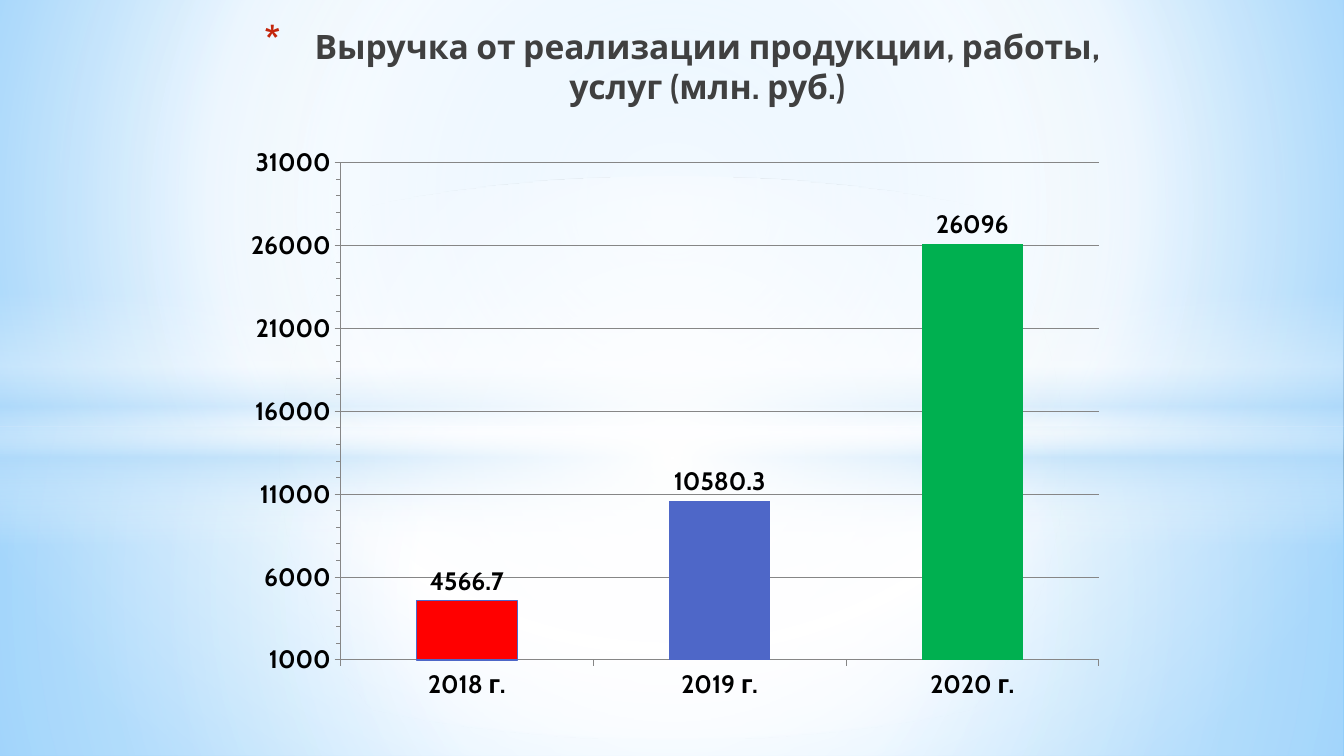
import pptx
import pptx.chart.data
import pptx.dml.color
import pptx.enum.chart
import pptx.enum.shapes
import pptx.enum.text
import pptx.oxml
import pptx.oxml.ns
import pptx.util

Pt = pptx.util.Pt
qn = pptx.oxml.ns.qn
NAMESPACES = pptx.oxml.ns.nsdecls("a", "c")

COLORS = {
    "white": "FFFFFF", "sky": "9ED5FF", "deep sky": "5BB9FF", "haze": "B4DCFA",
    "title": "404040", "bullet": "C3260C", "text": "000000", "grid": "868686",
    "2018": "FF0000", "2019": "4E67C8", "2020": "00B050",
}
CENTER = (50, 50, 50, 50)
REVENUE = {"2018 г.": 4566.7, "2019 г.": 10580.3, "2020 г.": 26096}


def rgb(name):
    return pptx.dml.color.RGBColor.from_string(COLORS[name])


def format_font(font, size=18, bold=True, color="text", name="Cabin"):
    font.size, font.bold, font.name = Pt(size), bold, name
    font.color.rgb = rgb(color)


def write_text(frame, text, align=pptx.enum.text.PP_ALIGN.CENTER, **font_format):
    """Put one formatted paragraph into the frame and return it."""
    frame.word_wrap = True
    paragraph = frame.paragraphs[0]
    paragraph.alignment = align
    run = paragraph.add_run()
    run.text = text
    format_font(run.font, **font_format)
    return paragraph


class RevenueSlide:
    def __init__(self, deck):
        self.slide = deck.slides.add_slide(deck.slide_layouts[5])
        self.width, self.height = deck.slide_width, deck.slide_height

    def gradient(self, fill, owner, stops, focus=None):
        """Stops are (position %, colour, opacity %); focus makes it radial."""
        fill.gradient()
        stops_xml = "".join(
            f'<a:gs pos="{position * 1000}"><a:srgbClr val="{COLORS[color]}">'
            f'<a:alpha val="{opacity * 1000}"/></a:srgbClr></a:gs>'
            for position, color, opacity in stops)
        if focus:
            sides = " ".join(f'{side}="{share * 1000}"' for side, share in zip("ltrb", focus))
            shade = f'<a:path path="circle"><a:fillToRect {sides}/></a:path>'
        else:
            shade = '<a:lin ang="5400000" scaled="0"/>'
        old = next(owner.iter(qn("a:gradFill")))
        old.getparent().replace(old, pptx.oxml.parse_xml(
            f'<a:gradFill {NAMESPACES} rotWithShape="1"><a:gsLst>{stops_xml}</a:gsLst>{shade}</a:gradFill>'))

    def background(self, stops, focus):
        self.gradient(self.slide.background.fill, self.slide.element, stops, focus)

    def glow(self, kind, top, height, stops, focus=None):
        glow = self.slide.shapes.add_shape(kind, 0, Pt(top), self.width, Pt(height))
        glow.shadow.inherit = False
        glow.line.fill.background()
        self.gradient(glow.fill, glow.element, stops, focus)

    def title(self, text, left, top, width, height):
        title = self.slide.shapes.title
        title.left, title.top, title.width, title.height = map(Pt, (left, top, width, height))
        # Bring the title in front of the glows
        title.element.getparent().append(title.element)
        title.text_frame.vertical_anchor = pptx.enum.text.MSO_ANCHOR.TOP
        title.text_frame.auto_size = pptx.enum.text.MSO_AUTO_SIZE.NONE
        heading = write_text(title.text_frame, text, size=24, color="title")
        # Hanging asterisk bullet
        properties = heading._p.get_or_add_pPr()
        properties.set("marL", str(Pt(50.4)))
        properties.set("indent", str(Pt(-36)))
        for bullet in (f'<a:buClr {NAMESPACES}><a:srgbClr val="{COLORS["bullet"]}"/></a:buClr>',
                       f'<a:buSzPct {NAMESPACES} val="128000"/>',
                       f'<a:buChar {NAMESPACES} char="*"/>'):
            properties.append(pptx.oxml.parse_xml(bullet))

    def column_chart(self, values, left, top, width, height, plot_area):
        chart_enum = pptx.enum.chart
        data = pptx.chart.data.CategoryChartData()
        data.categories = list(values)
        data.add_series("Series 1", list(values.values()))
        chart = self.slide.shapes.add_chart(
            chart_enum.XL_CHART_TYPE.COLUMN_CLUSTERED,
            Pt(left), Pt(top), Pt(width), Pt(height), data).chart
        chart.has_legend = chart.has_title = False
        format_font(chart.font, bold=False)

        # Axes
        years, amounts = chart.category_axis, chart.value_axis
        for axis in (years, amounts):
            axis.major_tick_mark = chart_enum.XL_TICK_MARK.OUTSIDE
            format_font(axis.tick_labels.font)
            axis.format.line.color.rgb = rgb("grid")
            axis.format.line.width = Pt(0.75)
        years.has_major_gridlines = False
        amounts.minimum_scale, amounts.maximum_scale = 1000, 31000
        amounts.major_unit, amounts.minor_unit = 5000, 1000
        amounts.minor_tick_mark = chart_enum.XL_TICK_MARK.OUTSIDE
        amounts.tick_labels.number_format = "General"
        amounts.tick_labels.number_format_is_linked = False
        amounts.major_gridlines.format.line.color.rgb = rgb("grid")
        amounts.major_gridlines.format.line.width = Pt(0.75)

        # Columns and their values
        plot = chart.plots[0]
        plot.gap_width = 150
        plot.vary_by_categories = False
        revenue = plot.series[0]
        revenue.format.fill.solid()
        revenue.format.fill.fore_color.rgb = rgb("2019")
        for index, year in enumerate(values):
            column = revenue.points[index].format
            column.fill.solid()
            column.fill.fore_color.rgb = rgb(year[:4])
        first_line = revenue.points[0].format.line
        first_line.color.rgb = rgb("2019")
        first_line.width = Pt(1)
        labels = revenue.data_labels
        labels.show_value = True
        labels.number_format, labels.number_format_is_linked = "General", False
        labels.position = chart_enum.XL_LABEL_POSITION.OUTSIDE_END
        format_font(labels.font)

        # Fixed inner plot area
        area = chart.element.find(".//" + qn("c:plotArea"))
        for layout in area.findall(qn("c:layout")):
            area.remove(layout)
        extent = "".join(f'<c:{key} val="{share}"/>' for key, share in zip("xywh", plot_area))
        area.insert(0, pptx.oxml.parse_xml(
            f'<c:layout {NAMESPACES}><c:manualLayout><c:layoutTarget val="inner"/>'
            f'<c:xMode val="edge"/><c:yMode val="edge"/>{extent}</c:manualLayout></c:layout>'))


def main():
    deck = pptx.Presentation()
    deck.slide_width, deck.slide_height = Pt(960), Pt(540)
    page = RevenueSlide(deck)
    shapes = pptx.enum.shapes.MSO_SHAPE

    # Sky backdrop
    page.background([(0, "sky", 100), (60, "white", 100), (100, "deep sky", 100)], (20, 10, 20, 60))
    page.glow(shapes.RECTANGLE, 304.8, 235.2,
              [(0, "white", 91), (37, "white", 76), (100, "haze", 79)], CENTER)
    page.glow(shapes.RECTANGLE, 0, 304.8,
              [(0, "white", 89), (48, "white", 62), (100, "haze", 79)], CENTER)
    page.glow(shapes.RECTANGLE, 208.8, 180,
              [(0, "white", 0), (29, "white", 30), (45, "haze", 40),
               (55, "white", 26), (65, "haze", 60), (100, "white", 0)])
    page.glow(shapes.OVAL, 126, 402, [(0, "white", 100), (54, "white", 0)], CENTER)

    # Title and chart
    page.title("Выручка от реализации продукции, работы, услуг (млн. руб.)", 134, 15, 692, 85)
    page.column_chart(REVENUE, 179.3, 100, 617.8, 408.2, (0.09, 0.04, 0.89, 0.87))
    deck.save("out.pptx")


if __name__ == "__main__":
    main()
